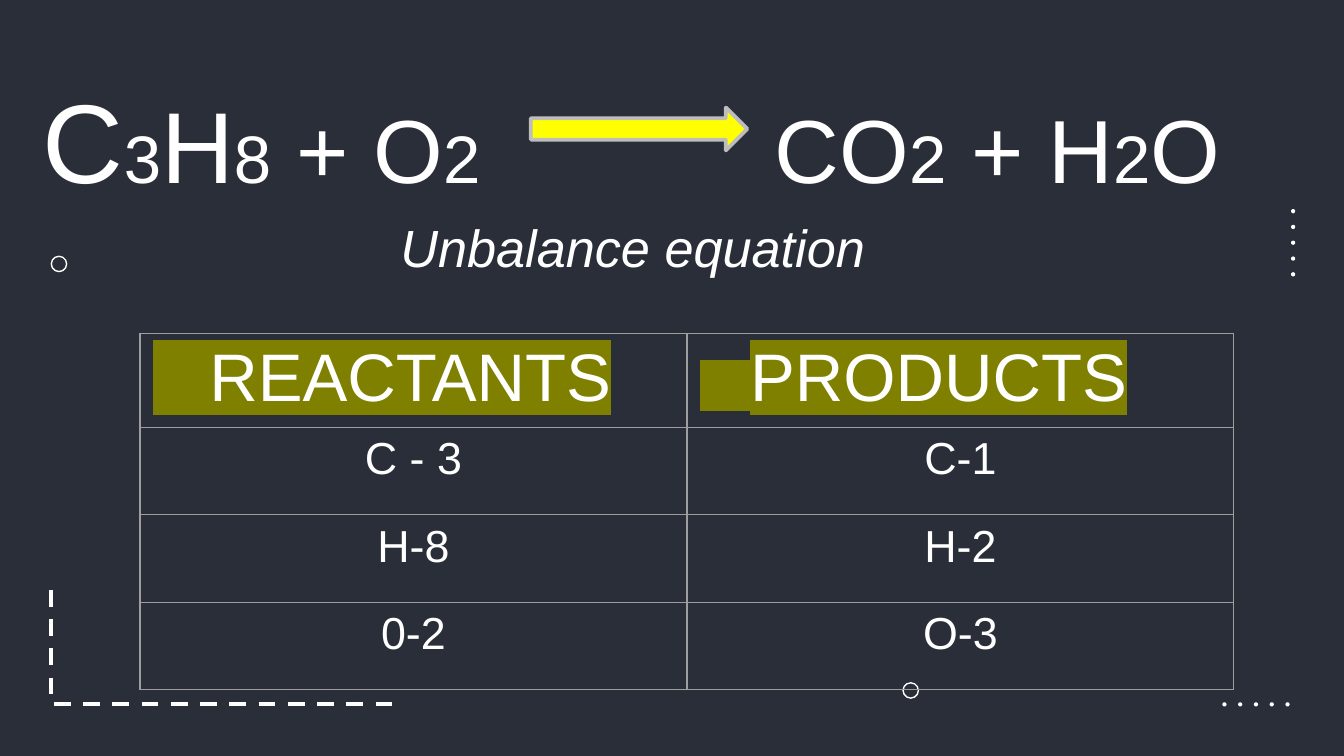
from lxml import etree
from pptx import Presentation
from pptx import util as u
from pptx.dml.color import RGBColor
from pptx.enum import dml, shapes, text
from pptx.oxml.ns import qn

NAVY = RGBColor(0x2A, 0x2E, 0x38)
WHITE = RGBColor(0xFF, 0xFF, 0xFF)
YELLOW = RGBColor(0xFF, 0xFF, 0x00)
SILVER = RGBColor(0xBD, 0xBD, 0xBD)
GRAY = RGBColor(0x9E, 0x9E, 0x9E)
OLIVE = RGBColor(0x80, 0x80, 0x00)

EQUATION = [
    ("C", 60), ("3", 36), ("H", 54), ("8", 36), (" + O", 48), ("2", 36),
    ("\tCO", 48), ("2", 36), (" + H", 48), ("2", 36), ("O", 48),
]
HEADINGS = [[("   REACTANTS", 36)], [("    ", 24), ("PRODUCTS", 36)]]
COUNTS = [("C - 3", "C-1"), ("H-8", "H-2"), ("0-2", "O-3")]


def add_color(parent, tag, color):
    """Append a colour-holding element to parent."""
    holder = etree.SubElement(parent, qn(tag))
    etree.SubElement(holder, qn("a:srgbClr"), val=str(color))


class Board:
    """Style and current slide, with one method per kind of element."""

    font = "Arial"
    ink = WHITE

    def __init__(self, deck):
        self.page = deck.slides.add_slide(deck.slide_layouts[5])
        self.page.background.fill.solid()
        self.page.background.fill.fore_color.rgb = NAVY

    def add_spans(self, para, spans, align=text.PP_ALIGN.LEFT, highlight=None):
        para.alignment = align
        para.font.name = self.font
        para.font.color.rgb = self.ink
        for words, size in spans:
            span = para.add_run()
            span.text = words
            span.font.size = u.Pt(size)
            if highlight is not None:
                add_color(span.font._element, "a:highlight", highlight)

    def frame(self, box, top_inset):
        frame = box.text_frame
        frame.word_wrap = True
        frame.auto_size = text.MSO_AUTO_SIZE.NONE
        frame.vertical_anchor = text.MSO_ANCHOR.TOP
        frame.margin_top, frame.margin_bottom = u.Pt(top_inset), 0
        return frame.paragraphs[0]

    def title(self, left, top, width, height, spans, tab):
        box = self.page.shapes.title
        box.left, box.top = u.Pt(left), u.Pt(top)
        box.width, box.height = u.Pt(width), u.Pt(height)
        para = self.frame(box, 9)
        self.add_spans(para, spans)
        stops = etree.Element(qn("a:tabLst"))
        etree.SubElement(stops, qn("a:tab"), pos=str(u.Pt(tab)), algn="l")
        para._p.get_or_add_pPr().insert(0, stops)

    def caption(self, left, top, width, height, words, size):
        box = self.page.shapes.add_textbox(*map(u.Pt, (left, top, width, height)))
        para = self.frame(box, 6)
        self.add_spans(para, [(words, size)])
        para.font.italic = True

    def shape(self, kind, left, top, width, height, fill=None, line=WHITE, weight=0.75):
        shape = self.page.shapes.add_shape(kind, *map(u.Pt, (left, top, width, height)))
        self.finish(shape, fill, line, weight)

    def finish(self, shape, fill, line, weight):
        shape.shadow.inherit = False
        if fill is None:
            shape.fill.background()
        else:
            shape.fill.solid()
            shape.fill.fore_color.rgb = fill
        shape.line.color.rgb = line
        shape.line.width = u.Pt(weight)

    def dots(self, left, top, step_x, step_y, count=5):
        for i in range(count):
            self.shape(shapes.MSO_SHAPE.OVAL, left + i * step_x, top + i * step_y, 1.5, 1.5, WHITE)

    def dashes(self, start, *points):
        builder = self.page.shapes.build_freeform(*map(u.Pt, start))
        builder.add_line_segments([tuple(map(u.Pt, point)) for point in points], close=False)
        corner = builder.convert_to_shape()
        self.finish(corner, None, WHITE, 2.25)
        corner.line.dash_style = dml.MSO_LINE.DASH

    def table(self, left, top, width, heights, headings, rows):
        size = len(heights), len(headings)
        table = self.page.shapes.add_table(
            *size, *map(u.Pt, (left, top, width, sum(heights)))).table
        table.first_row = table.horz_banding = False
        for row, height in zip(table.rows, heights):
            row.height = u.Pt(height)
        for col, spans in enumerate(headings):
            self.cell(table.cell(0, col), spans, highlight=OLIVE)
        for row, values in enumerate(rows, 1):
            for col, value in enumerate(values):
                self.cell(table.cell(row, col), [(value, 24)], text.PP_ALIGN.CENTER)

    def cell(self, cell, spans, align=text.PP_ALIGN.LEFT, highlight=None):
        self.add_spans(cell.text_frame.paragraphs[0], spans, align, highlight)
        cell.fill.background()
        props = cell._tc.get_or_add_tcPr()
        for i, side in enumerate("LRTB"):
            border = etree.Element(qn(f"a:ln{side}"), w=str(u.Pt(0.75)))
            add_color(border, "a:solidFill", GRAY)
            props.insert(i, border)


def main():
    deck = Presentation()
    deck.slide_width, deck.slide_height = u.Pt(720), u.Pt(405)
    board = Board(deck)
    board.dashes((27.5, 316), (27.5, 377.3), (210, 377.3))
    board.dots(655.2, 376.6, 8.45, 0)
    board.dots(692, 112.4, 0, 8.45)
    for left, top in [(483.8, 365.8), (27.5, 137.3)]:
        board.shape(shapes.MSO_SHAPE.OVAL, left, top, 8.2, 8.2)
    board.title(15.8, 29.5, 704.2, 80, EQUATION, tab=392)
    board.shape(shapes.MSO_SHAPE.RIGHT_ARROW, 284.4, 57.6, 116, 23, YELLOW, SILVER, 2)
    board.table(75, 178.6, 586, [50.4] + [46.8] * 3, HEADINGS, COUNTS)
    board.caption(207.4, 109.4, 305.3, 41, "Unbalance equation", 28)
    deck.save("out.pptx")


if __name__ == "__main__":
    main()
